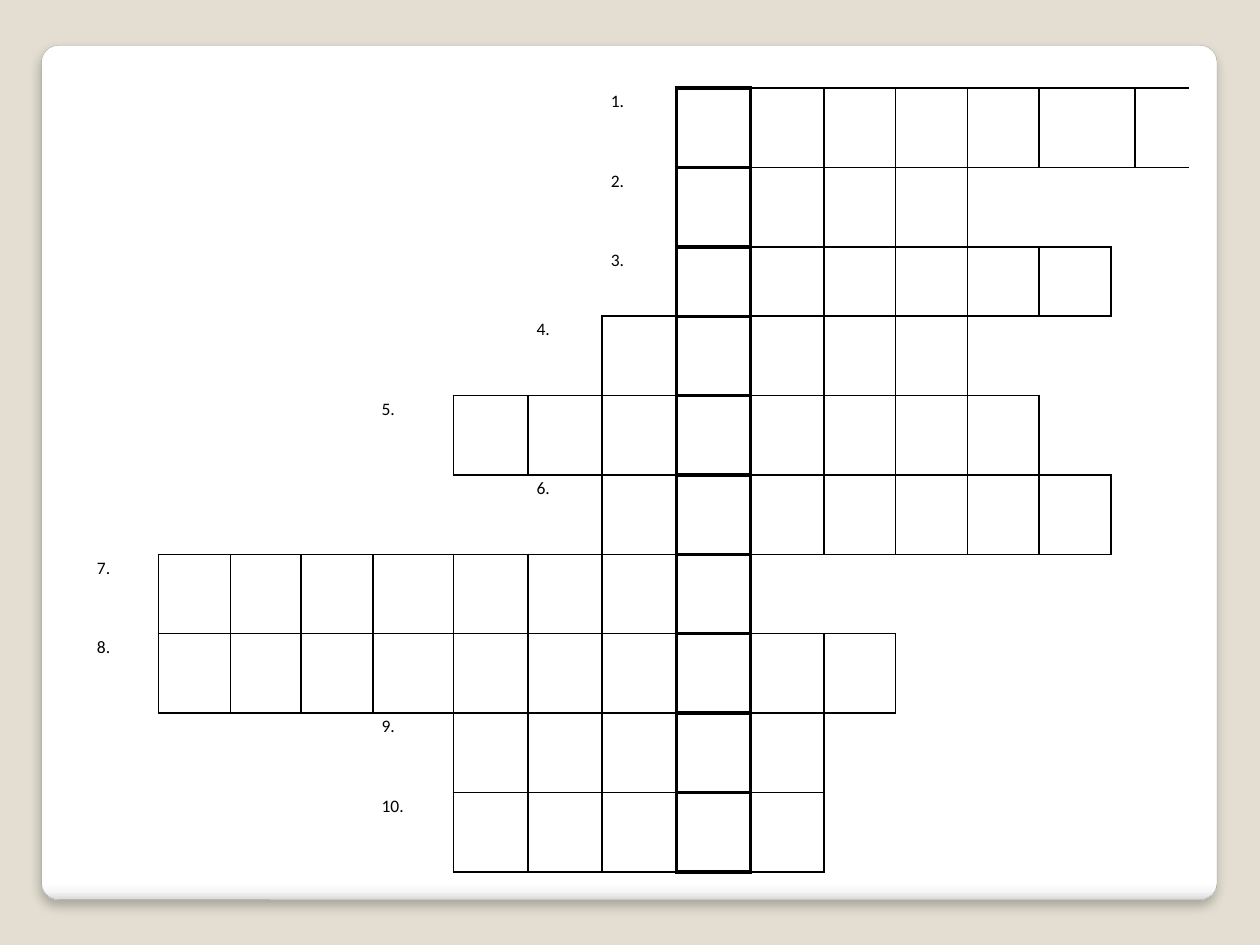
from lxml.etree import SubElement
from pptx import Presentation
from pptx.dml.color import RGBColor
from pptx.enum.shapes import MSO_SHAPE
from pptx.oxml.ns import qn
from pptx.util import Inches, Pt

COLORS = {"back": "E3DED1", "panel": "FFFFFF", "fade": "F7F7F7",
          "edge": "DADADA", "rim": "A4A4A4", "ink": "000000"}
COLS = [0.56, 0.57, 0.56, 0.57, 0.64] + [0.59] * 4 + [0.58] + [0.57] * 4 + [0.19] * 3
ROWS = [0.63, 0.63, 0.55] + [0.63] * 7
# First and last column of each word
WORDS = [(8, 16), (8, 11), (8, 13), (7, 11), (5, 12),
         (7, 13), (1, 8), (1, 10), (5, 9), (5, 9)]
KEY = 8
THIN, THICK = 1, 2.25
SIDES = {"L": (0, -1), "R": (0, 1), "T": (-1, 0), "B": (1, 0)}


def color(name):
    return RGBColor.from_string(COLORS[name])


def node(parent, tag, **attrs):
    return SubElement(parent, qn(tag), {k: str(v) for k, v in attrs.items()})


def add_panel(slide):
    panel = slide.shapes.add_shape(MSO_SHAPE.ROUNDED_RECTANGLE, Inches(0.33),
                                   Inches(0.36), Inches(9.33), Inches(6.78))
    panel.adjustments[0] = 0.02
    panel.line.color.rgb = color("rim")
    panel.line.width = Pt(0.16)
    panel.fill.gradient()
    panel.fill.gradient_angle = 270
    props = panel._element.spPr
    stops = props.find(".//" + qn("a:gsLst"))
    for stop in list(stops):
        stops.remove(stop)
    for spot, name in [(0, "panel"), (98, "panel"), (99, "fade"), (100, "edge")]:
        stop = node(stops, "a:gs", pos=spot * 1000)
        node(stop, "a:srgbClr", val=COLORS[name])
    glow = node(node(props, "a:effectLst"), "a:outerShdw", blurRad=Pt(6),
                dist=Pt(4), dir=90 * 60000, algn="t", rotWithShape=0)
    node(node(glow, "a:srgbClr", val=COLORS["ink"]), "a:alpha", val=25000)


def spans(row):
    """Pairs of columns joined in a row."""
    return [(13, 14), (15, 16)] if row == 0 else [(14, 15)]


def weight(row, col):
    """Outline width of a box, or 0 outside the words."""
    if not 0 <= row < len(WORDS):
        return 0
    first, last = WORDS[row]
    if not first <= col <= last:
        return 0
    return THICK if col == KEY else THIN


def set_border(cell, row, col):
    props = cell._tc.get_or_add_tcPr()
    for side, (down, right) in SIDES.items():
        width = max(weight(row, col), weight(row + down, col + right))
        if down == 0 and tuple(sorted((col, col + right))) in spans(row):
            width = 0
        line = node(props, "a:ln" + side, w=Pt(width))
        if width:
            node(node(line, "a:solidFill"), "a:srgbClr", val=COLORS["ink"])
        else:
            node(line, "a:noFill")


def set_label(cell, text):
    cell.margin_left = cell.margin_right = Inches(0.07)
    cell.margin_top = cell.margin_bottom = 0
    para = cell.text_frame.paragraphs[0]
    para.line_spacing = 1.15
    run = para.add_run()
    run.text = text
    run.font.size = Pt(10)
    run.font.name = "Calibri"
    run.font.color.rgb = color("ink")


def add_grid(slide):
    frame = slide.shapes.add_table(len(ROWS), len(COLS), Inches(0.7), Inches(0.7),
                                   Inches(sum(COLS)), Inches(sum(ROWS)))
    table = frame.table
    table.first_row = table.horz_banding = False
    for col, width in zip(table.columns, COLS):
        col.width = Inches(width)
    for r, height in enumerate(ROWS):
        table.rows[r].height = Inches(height)
        for c in range(len(COLS)):
            cell = table.cell(r, c)
            set_border(cell, r, c)
            cell.fill.background()
        for left, right in spans(r):
            table.cell(r, left).merge(table.cell(r, right))
        set_label(table.cell(r, WORDS[r][0] - 1), f"{r + 1}.")


def main():
    deck = Presentation()
    deck.slide_width, deck.slide_height = Inches(10), Inches(7.5)
    slide = deck.slides.add_slide(deck.slide_layouts[6])
    slide.background.fill.solid()
    slide.background.fill.fore_color.rgb = color("back")
    add_panel(slide)
    add_grid(slide)
    deck.save("out.pptx")


if __name__ == "__main__":
    main()
